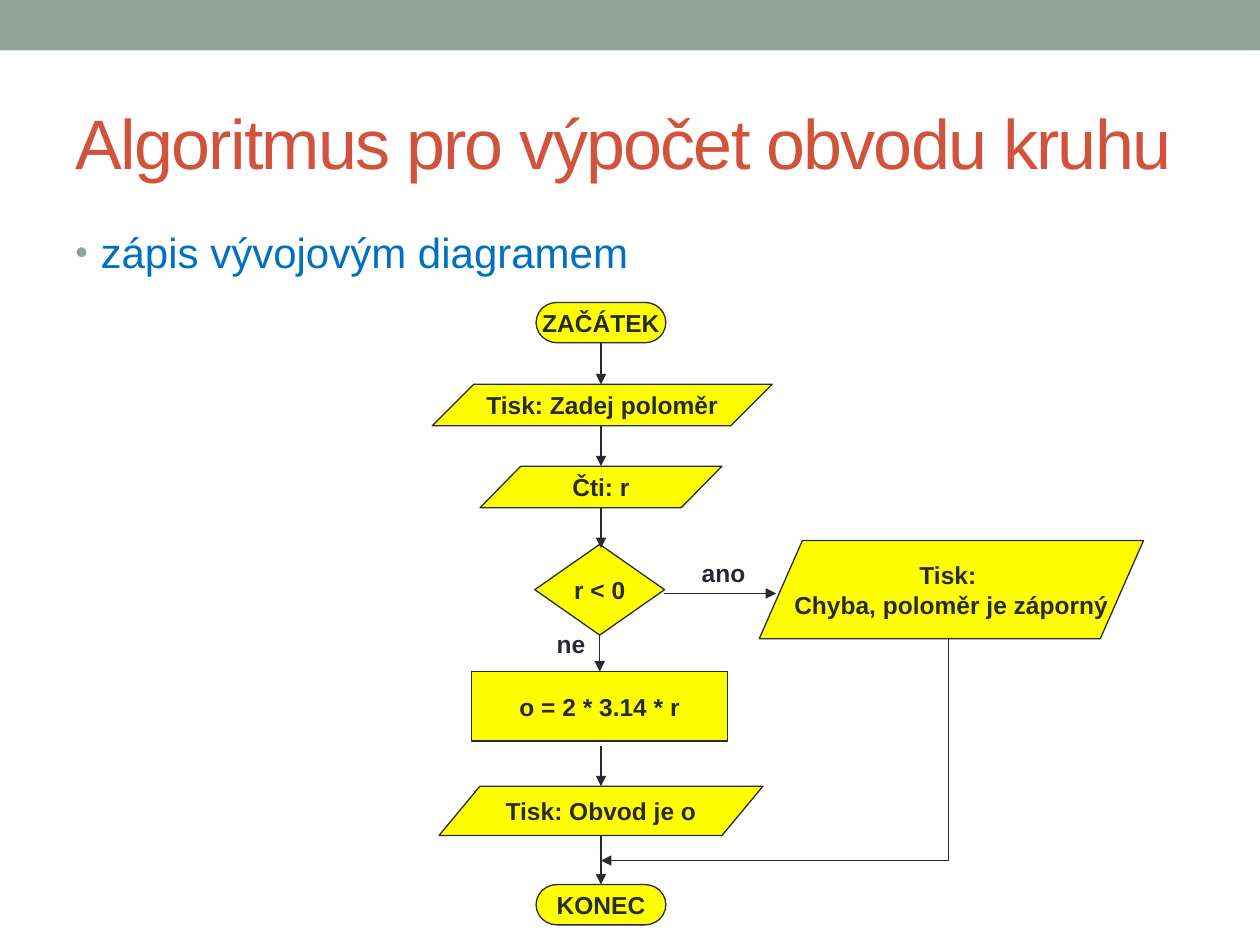
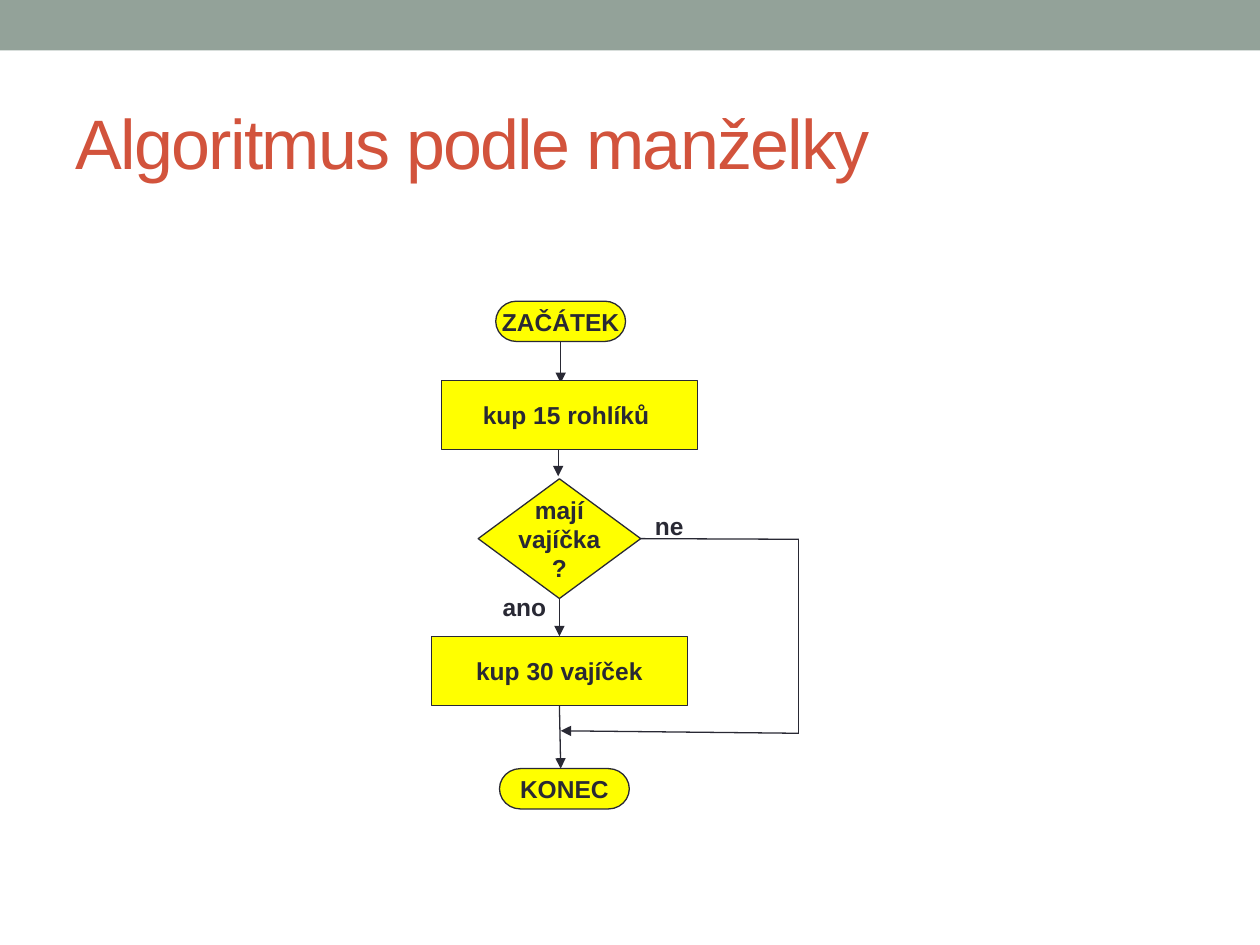
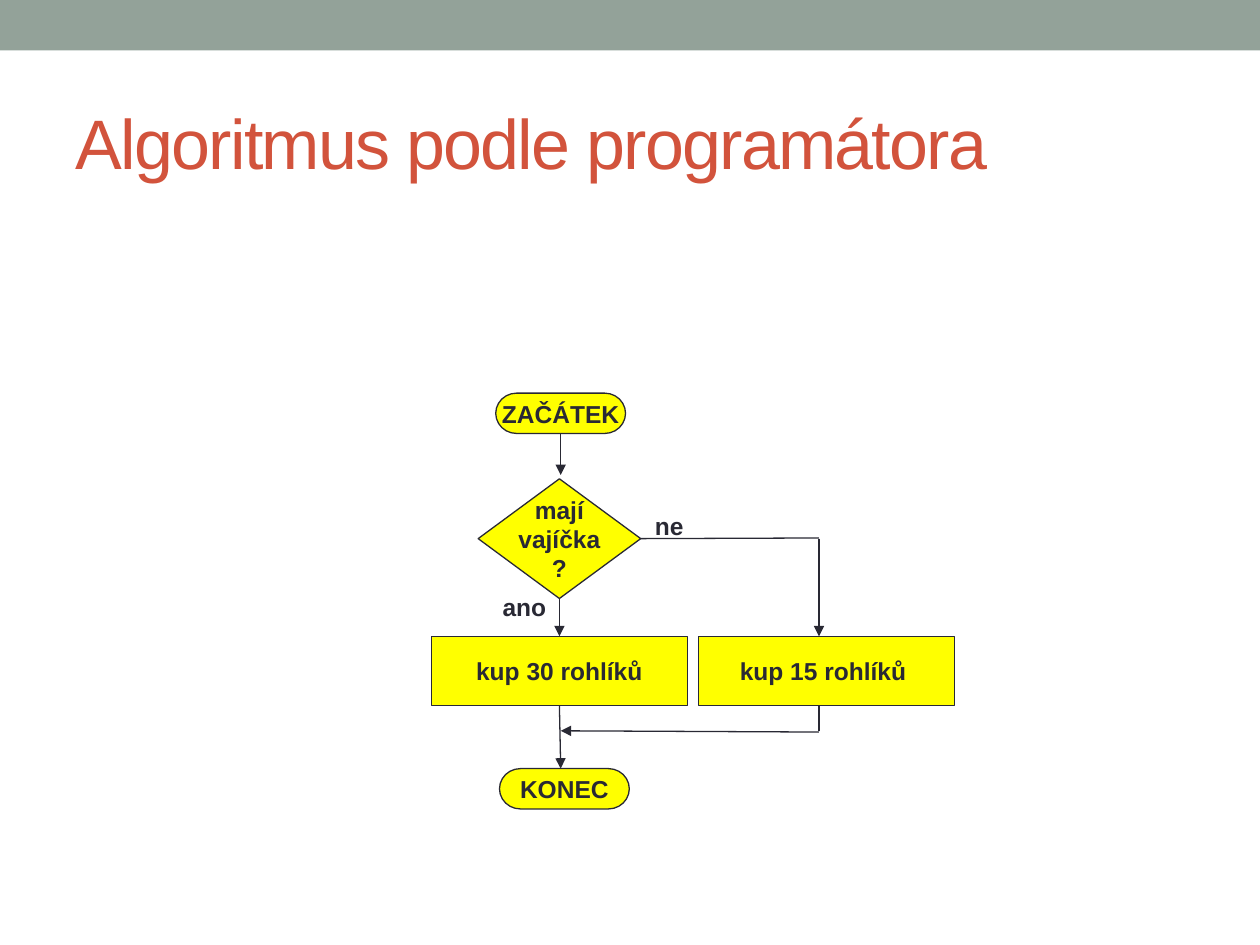
from dataclasses import dataclass

from lxml.etree import SubElement
from pptx import Presentation
from pptx.dml.color import RGBColor
from pptx.enum.shapes import MSO_CONNECTOR, MSO_SHAPE as Shape
from pptx.enum.text import MSO_ANCHOR as Anchor, MSO_AUTO_SIZE as AutoSize, PP_ALIGN as Align
from pptx.oxml.ns import qn
from pptx.util import Inches, Pt

TOP, LEFT, BOTTOM, RIGHT = range(4)


@dataclass(frozen=True)
class Theme:
    font: str = "Arial"
    band: str = "93A299"
    title: str = "D2533C"
    lead: str = "0070C0"
    ink: str = "292934"
    node: str = "FFFF00"
    title_size: float = 40
    lead_size: float = 24
    node_size: float = 14
    line_width: float = 0.75


def write_text(frame, text, *, font, size, color, bold=False, align=Align.LEFT,
               anchor=Anchor.TOP, wrap=False, tracking=None):
    """Fill a text frame, one paragraph for each line of text."""
    frame.word_wrap = wrap
    frame.auto_size = AutoSize.NONE
    frame.vertical_anchor = anchor
    for index, line in enumerate(text.split("\n")):
        paragraph = frame.add_paragraph() if index else frame.paragraphs[0]
        paragraph.alignment = align
        run = paragraph.add_run()
        run.text = line
        run.font.name = font
        run.font.size = Pt(size)
        run.font.bold = bold
        run.font.color.rgb = RGBColor.from_string(color)
        if tracking is not None:
            run.font._element.set("spc", str(round(tracking * 100)))


class FlowDeck:
    """Holds the style and the current slide."""

    def __init__(self, theme):
        self.theme = theme
        self.presentation = Presentation()
        self.presentation.slide_width = Inches(10)
        self.presentation.slide_height = Inches(7.5)
        self.slide = None

    def new_slide(self, title):
        theme = self.theme
        layout = self.presentation.slide_layouts.get_by_name("Title Only")
        self.slide = self.presentation.slides.add_slide(layout)
        # Band across the top
        band = self.slide.shapes.add_shape(Shape.RECTANGLE, 0, 0, Inches(10), Inches(0.4))
        band.shadow.inherit = False
        band.fill.solid()
        band.fill.fore_color.rgb = RGBColor.from_string(theme.band)
        band.line.fill.background()
        # Title
        heading = self.slide.shapes.title
        heading.left, heading.top = Inches(0.5), Inches(0.58)
        heading.width, heading.height = Inches(9), Inches(1.08)
        write_text(heading.text_frame, title, font=theme.font, size=theme.title_size,
                   color=theme.title, anchor=Anchor.MIDDLE, wrap=True, tracking=-1)

    def text_box(self, left, top, width, height, text, **style):
        box = self.slide.shapes.add_textbox(Inches(left), Inches(top),
                                            Inches(width), Inches(height))
        write_text(box.text_frame, text, font=self.theme.font, **style)
        return box

    def bullet(self, text):
        theme = self.theme
        box = self.text_box(0.5, 1.75, 9, 5.33, text, size=theme.lead_size,
                            color=theme.lead, wrap=True)
        paragraph = box.text_frame.paragraphs[0]
        paragraph.space_before = Pt(theme.lead_size * 0.2)
        properties = paragraph._p.get_or_add_pPr()
        properties.set("marL", str(Inches(0.2)))
        properties.set("indent", str(-Inches(0.2)))
        color = SubElement(properties, qn("a:buClr"))
        SubElement(color, qn("a:srgbClr"), val=theme.band)
        SubElement(properties, qn("a:buSzPct"), val="85000")
        SubElement(properties, qn("a:buFont"), typeface=theme.font)
        SubElement(properties, qn("a:buChar"), char="•")

    def label(self, left, top, text):
        self.text_box(left, top, 0.55 if text == "ano" else 0.43, 0.34, text,
                      size=self.theme.node_size, color=self.theme.ink, bold=True)

    def node(self, kind, center, top, width, height, text, slant=None):
        """Flowchart symbol placed by its horizontal center."""
        theme = self.theme
        shape = self.slide.shapes.add_shape(kind, Inches(center - width / 2), Inches(top),
                                            Inches(width), Inches(height))
        if slant is not None:
            shape.adjustments[0] = slant
        shape.shadow.inherit = False
        shape.fill.solid()
        shape.fill.fore_color.rgb = RGBColor.from_string(theme.node)
        shape.line.color.rgb = RGBColor.from_string(theme.ink)
        shape.line.width = Pt(theme.line_width)
        write_text(shape.text_frame, text, font=theme.font, size=theme.node_size,
                   color=theme.ink, bold=True, align=Align.CENTER, anchor=Anchor.MIDDLE)
        return shape

    def terminator(self, center, top, text):
        return self.node(Shape.FLOWCHART_TERMINATOR, center, top, 1.03, 0.32, text)

    def process(self, center, top, text):
        return self.node(Shape.FLOWCHART_PROCESS, center, top, 2.03, 0.55, text)

    def decision(self, center, top, width, height, text):
        return self.node(Shape.FLOWCHART_DECISION, center, top, width, height, text)

    def print_step(self, center, top, width, height, text, slant):
        return self.node(Shape.PARALLELOGRAM, center, top, width, height, text, slant)

    def connect(self, start, end, arrow=True):
        """Straight line; each end is a point (x, y) or a pair (shape, side)."""
        def is_point(place):
            return isinstance(place[0], (int, float))

        x1, y1 = start if is_point(start) else (0, 0)
        x2, y2 = end if is_point(end) else (0, 0)
        line = self.slide.shapes.add_connector(MSO_CONNECTOR.STRAIGHT, Inches(x1), Inches(y1),
                                               Inches(x2), Inches(y2))
        if not is_point(start):
            line.begin_connect(*start)
        if not is_point(end):
            line.end_connect(*end)
        line.line.color.rgb = RGBColor.from_string(self.theme.ink)
        line.line.width = Pt(self.theme.line_width)
        properties = line._element.spPr
        if arrow:
            SubElement(properties.find(qn("a:ln")), qn("a:tailEnd"), type="triangle")
        SubElement(properties, qn("a:effectLst"))


def circumference_slide(deck):
    deck.new_slide("Algoritmus pro výpočet obvodu kruhu")
    deck.bullet("zápis vývojovým diagramem")
    axis, test_axis, error_axis = 4.77, 4.76, 7.53

    # Symbols
    begin = deck.terminator(axis, 2.4, "ZAČÁTEK")
    test = deck.decision(test_axis, 4.32, 1.03, 0.72, "r < 0")
    formula = deck.process(test_axis, 5.33, "o = 2 * 3.14 * r")
    finish = deck.terminator(axis, 7.02, "KONEC")

    # Main flow
    deck.connect((begin, BOTTOM), (axis, 3.05))
    deck.connect((axis, 3.38), (axis, 3.7))
    deck.connect((axis, 4.03), (axis, 4.35))
    deck.connect((test, BOTTOM), (formula, TOP))
    deck.connect((axis, 5.92), (axis, 6.24))
    deck.connect((axis, 6.63), (finish, TOP))
    deck.label(4.32, 4.94, "ne")

    # Error branch
    deck.connect((5.27, 4.71), (6.16, 4.71))
    deck.label(5.47, 4.38, "ano")
    deck.connect((error_axis, 5.07), (error_axis, 6.83), arrow=False)
    deck.connect((error_axis, 6.83), (axis, 6.83))

    # Input and output steps
    deck.print_step(4.78, 3.05, 2.7, 0.33, "Tisk: Zadej poloměr", 1)
    deck.print_step(axis, 3.7, 1.92, 0.33, "Čti: r", 0.98)
    deck.print_step(axis, 6.24, 2.57, 0.39, "Tisk: Obvod je o", 0.83)
    deck.print_step(7.55, 4.29, 3.05, 0.78, "Tisk: \nChyba, poloměr je záporný", 0.44)


def shopping_flow(deck, title, begin_top, first_stop, yes_step):
    """Shared part of both shopping charts; returns the decision."""
    deck.new_slide(title)
    axis, test_axis = 4.45, 4.44
    test = deck.decision(test_axis, 3.8, 1.29, 0.95, "mají\nvajíčka\n?")
    bought = deck.process(test_axis, 5.05, yes_step)
    begin = deck.terminator(axis, begin_top, "ZAČÁTEK")
    deck.terminator(4.48, 6.1, "KONEC")
    deck.connect((begin, BOTTOM), (axis, first_stop))
    deck.connect((test, BOTTOM), (bought, TOP))
    deck.connect((bought, BOTTOM), (axis, 6.1))
    deck.label(3.89, 4.65, "ano")
    deck.label(5.1, 4.01, "ne")
    return test


def wife_slide(deck):
    test = shopping_flow(deck, "Algoritmus podle manželky", 2.39, 3.04, "kup 30 vajíček")
    bypass = 6.34
    deck.connect((4.43, 3.46), (4.43, 3.78))
    deck.process(4.52, 3.02, "kup 15 rohlíků ")
    # Bypass when there are no eggs
    deck.connect((test, RIGHT), (bypass, 4.28), arrow=False)
    deck.connect((bypass, 4.28), (bypass, 5.82), arrow=False)
    deck.connect((bypass, 5.82), (4.45, 5.8))


def programmer_slide(deck):
    test = shopping_flow(deck, "Algoritmus podle programátora", 3.12, 3.77, "kup 30 rohlíků")
    branch = 6.5
    # Branch when there are no eggs
    deck.process(6.56, 5.05, "kup 15 rohlíků ")
    deck.connect((test, RIGHT), (branch, 4.27), arrow=False)
    deck.connect((branch, 4.28), (branch, 5.05))
    deck.connect((branch, 5.6), (branch, 5.8), arrow=False)
    deck.connect((branch, 5.81), (4.45, 5.8))


def main():
    deck = FlowDeck(Theme())
    circumference_slide(deck)
    wife_slide(deck)
    programmer_slide(deck)
    deck.presentation.save("out.pptx")


if __name__ == "__main__":
    main()
